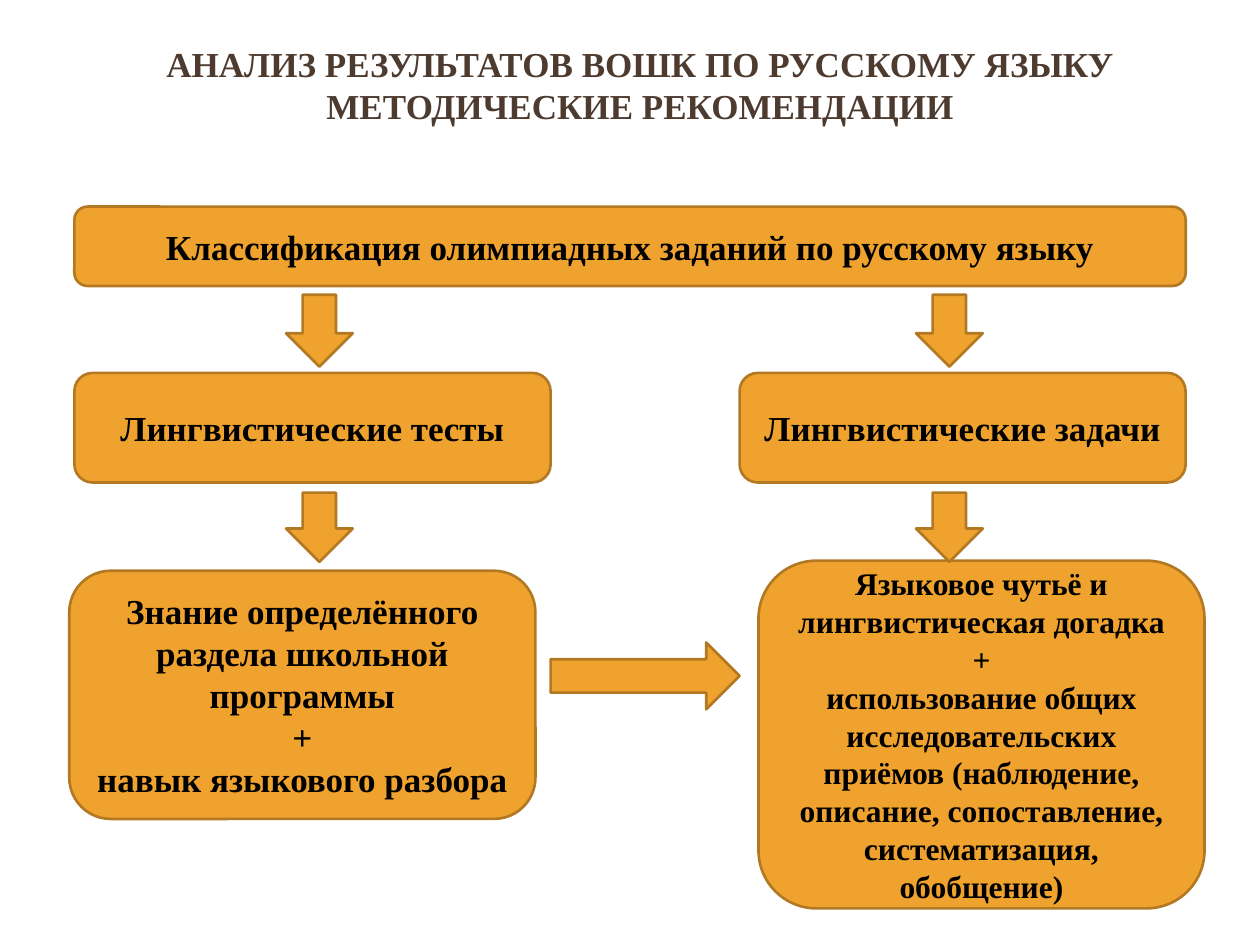
from pptx import Presentation
from pptx.dml.color import RGBColor
from pptx.enum.shapes import MSO_SHAPE
from pptx.enum.text import MSO_ANCHOR, MSO_AUTO_SIZE, PP_ALIGN
from pptx.util import Inches, Pt

ROUNDED = MSO_SHAPE.ROUNDED_RECTANGLE
DOWN = MSO_SHAPE.DOWN_ARROW
RIGHT = MSO_SHAPE.RIGHT_ARROW
TOP, MIDDLE = MSO_ANCHOR.TOP, MSO_ANCHOR.MIDDLE
CENTER = PP_ALIGN.CENTER
NO_AUTOFIT = MSO_AUTO_SIZE.NONE

FONT = "Times New Roman"
ORANGE, DARK_ORANGE = "F0A22E", "B27822"
BROWN, BLACK = "4E3B30", "000000"
TITLE_ONLY_LAYOUT = 5

TITLE = "АНАЛИЗ РЕЗУЛЬТАТОВ ВОШК ПО РУССКОМУ ЯЗЫКУ\vМЕТОДИЧЕСКИЕ РЕКОМЕНДАЦИИ"
TEST_SKILLS = [
    "Знание определённого раздела школьной программы",
    "+",
    "навык языкового разбора",
]
PROBLEM_SKILLS = [
    "Языковое чутьё и лингвистическая догадка",
    "+",
    "использование общих исследовательских приёмов (наблюдение, "
    "описание, сопоставление, систематизация, обобщение)",
]


def color(hex_text):
    return RGBColor.from_string(hex_text)


def write_text(shape, lines, size=20, text_color=BLACK, anchor=MIDDLE):
    """Fill a shape with centred bold paragraphs, one per line."""
    frame = shape.text_frame
    frame.word_wrap = True
    frame.auto_size = NO_AUTOFIT
    frame.vertical_anchor = anchor
    for index, line in enumerate(lines):
        para = frame.add_paragraph() if index else frame.paragraphs[0]
        para.text = line
        para.alignment = CENTER
        for span in para.runs:
            span.font.name = FONT
            span.font.size = Pt(size)
            span.font.bold = True
            span.font.color.rgb = color(text_color)


def place_title(page, text):
    title = page.shapes.title
    title.left, title.top = Inches(0.33), Inches(0.29)
    title.width, title.height = Inches(9.5), Inches(0.87)
    write_text(title, [text], text_color=BROWN, anchor=TOP)


def add_figure(page, kind, left, top, width, height):
    """Add an orange outlined preset shape."""
    figure = page.shapes.add_shape(
        kind, Inches(left), Inches(top), Inches(width), Inches(height))
    figure.shadow.inherit = False
    figure.fill.solid()
    figure.fill.fore_color.rgb = color(ORANGE)
    figure.line.color.rgb = color(DARK_ORANGE)
    figure.line.width = Pt(1.5)
    return figure


def add_box(page, lines, left, top, width, height, size=20):
    box = add_figure(page, ROUNDED, left, top, width, height)
    write_text(box, lines, size=size)


def main():
    deck = Presentation()
    deck.slide_width, deck.slide_height = Inches(10), Inches(7.5)
    page = deck.slides.add_slide(deck.slide_layouts[TITLE_ONLY_LAYOUT])

    place_title(page, TITLE)
    add_box(page, ["Классификация олимпиадных заданий по русскому языку"],
            0.59, 1.64, 8.82, 0.63)
    add_box(page, ["Лингвистические тесты"], 0.59, 2.96, 3.78, 0.87)
    add_box(page, ["Лингвистические задачи"], 5.87, 2.96, 3.54, 0.87)
    add_box(page, TEST_SKILLS, 0.55, 4.53, 3.7, 1.97)
    add_box(page, PROBLEM_SKILLS, 6.02, 4.45, 3.54, 2.76, size=18)

    for left in (2.27, 7.27):
        for top, height in ((2.34, 0.57), (3.91, 0.55)):
            add_figure(page, DOWN, left, top, 0.53, height)
    add_figure(page, RIGHT, 4.37, 5.1, 1.5, 0.53)

    deck.save("out.pptx")


if __name__ == "__main__":
    main()
